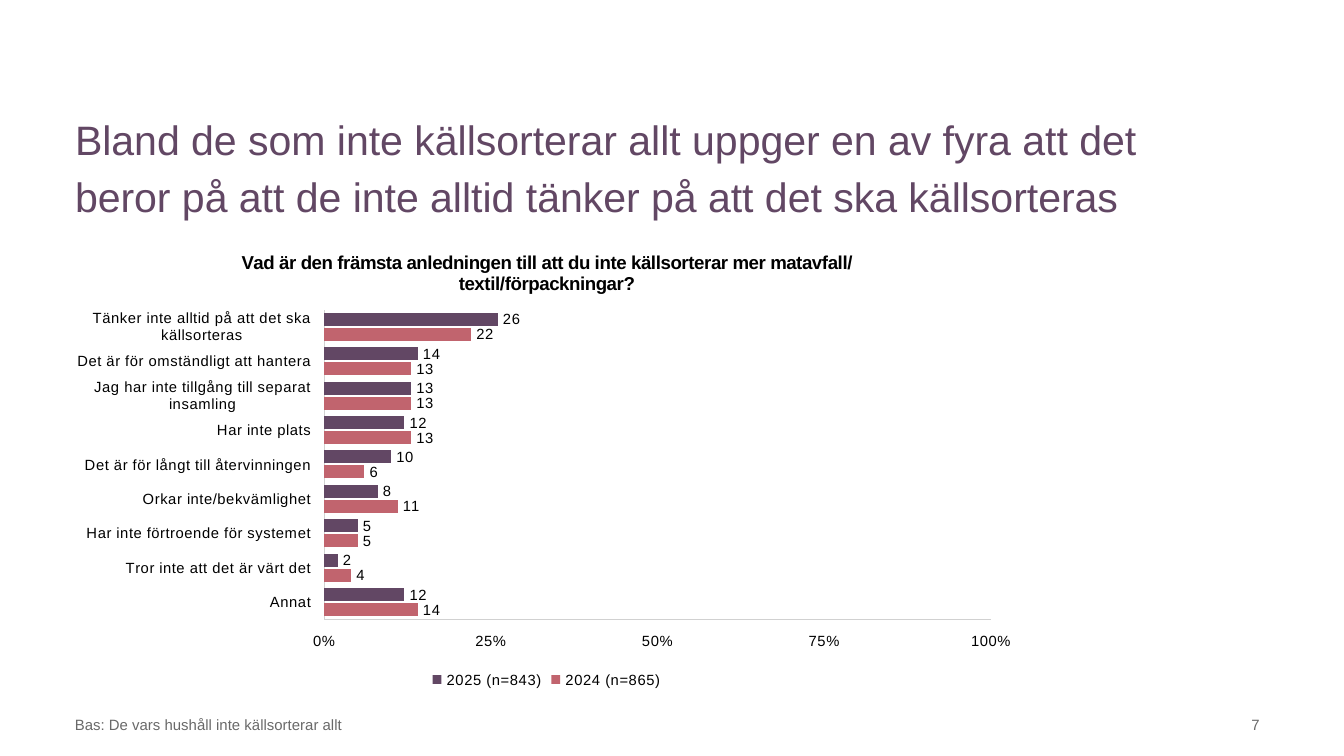
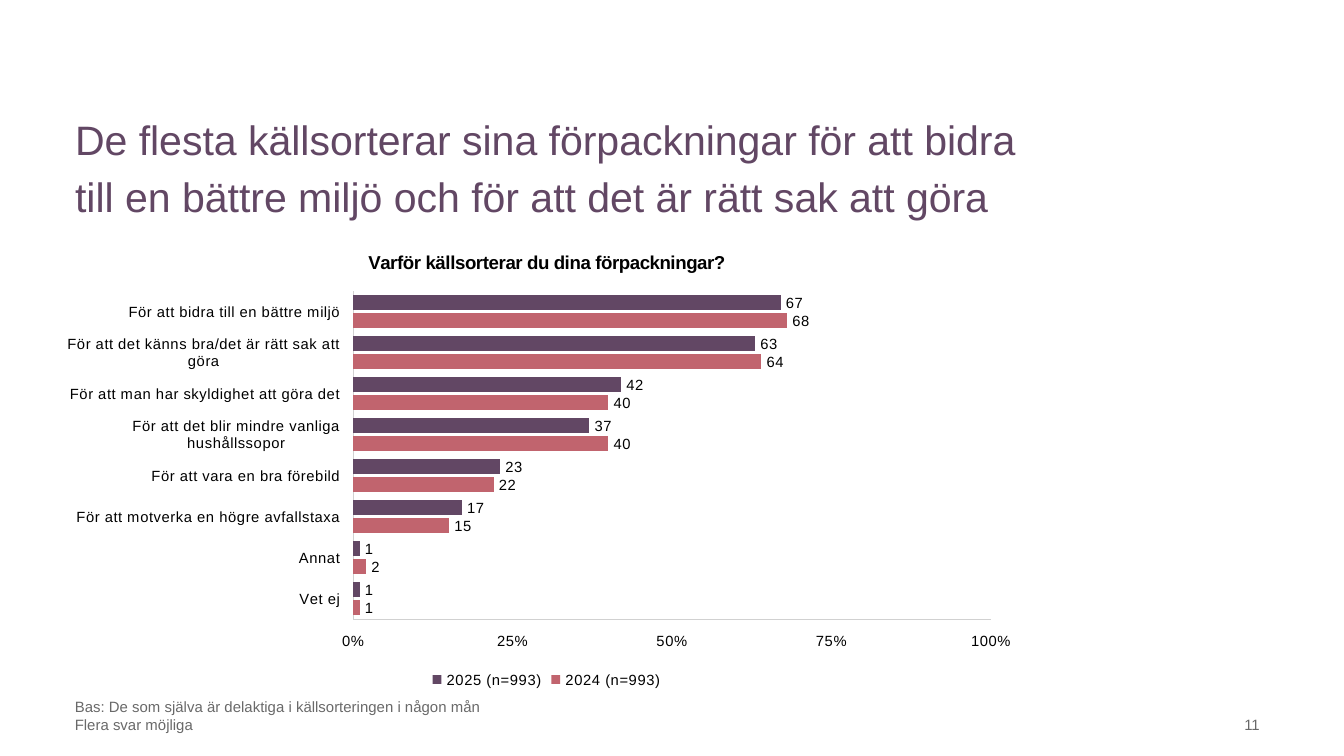
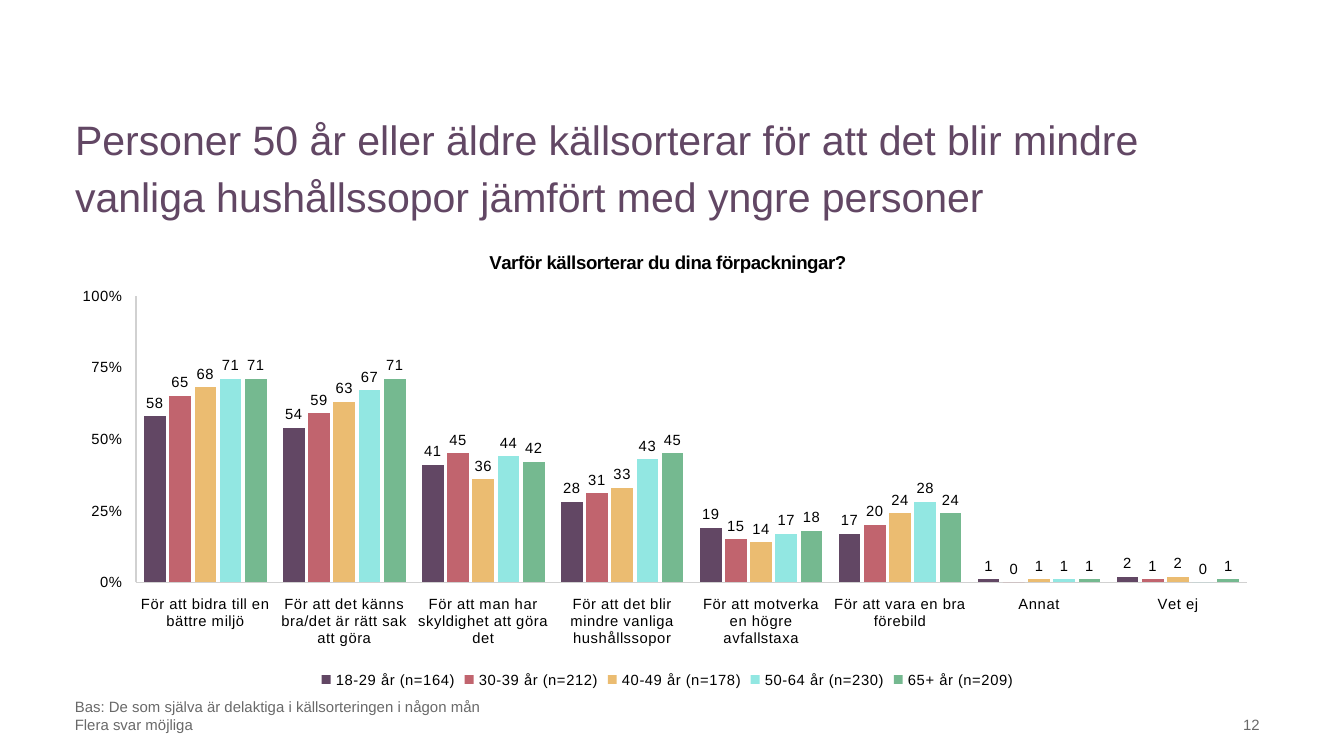
from dataclasses import dataclass

from lxml.etree import Element, SubElement
from pptx import Presentation
from pptx.chart.data import CategoryChartData as ChartData
from pptx.dml.color import RGBColor
from pptx.enum.chart import (
    XL_CHART_TYPE as ChartType,
    XL_LABEL_POSITION as LabelPosition,
    XL_LEGEND_POSITION as LegendPosition,
    XL_TICK_LABEL_POSITION as TickLabelPosition,
    XL_TICK_MARK as TickMark,
)
from pptx.enum.text import MSO_ANCHOR as Anchor, MSO_AUTO_SIZE as AutoSize, PP_ALIGN as Align
from pptx.oxml.ns import qn
from pptx.util import Pt


@dataclass(frozen=True)
class Theme:
    font: str = "Arial"
    plum: str = "624764"
    rose: str = "C1646E"
    sand: str = "EBBC71"
    aqua: str = "92E7E2"
    green: str = "75B990"
    black: str = "000000"
    grey: str = "696969"
    axis_grey: str = "D1D1D1"
    headline_size: float = 22
    question_size: float = 10
    footer_size: float = 8
    chart_size: float = 7.9
    question_tracking: int = -10
    label_tracking: int = 15


THEME = Theme()
AGE_COLORS = (THEME.plum, THEME.rose, THEME.sand, THEME.aqua, THEME.green)
YEAR_COLORS = (THEME.rose, THEME.plum)

AXIS_FORMAT = {
    "has_major_gridlines": False,
    "major_tick_mark": TickMark.NONE,
    "minor_tick_mark": TickMark.NONE,
    "tick_label_position": TickLabelPosition.LOW,
}
SCALE_FORMAT = {"minimum_scale": 0, "maximum_scale": 100, "major_unit": 25}
PERCENT_FORMAT = {"number_format": r"General\%", "number_format_is_linked": False}
LEGEND_FORMAT = {"position": LegendPosition.BOTTOM, "include_in_layout": False}
VALUE_LABEL_FORMAT = {
    "show_value": True,
    "number_format": "0",
    "number_format_is_linked": False,
    "position": LabelPosition.OUTSIDE_END,
}


def apply(target, values):
    for name, value in values.items():
        setattr(target, name, value)


class Report:
    def __init__(self, theme):
        self.theme = theme
        self.deck = Presentation()
        apply(self.deck, {"slide_width": Pt(720), "slide_height": Pt(405)})
        self.slide = None

    def new_slide(self, headline, headline_width, base, number):
        self.slide = self.deck.slides.add_slide(self.deck.slide_layouts[5])
        self.headline(headline, headline_width)
        self.footer(base, 33, 562, Align.LEFT)
        self.footer([number], 605, 77, Align.RIGHT)

    def style(self, font, size, color, bold=False):
        apply(font, {"name": self.theme.font, "size": Pt(size), "bold": bold})
        font.color.rgb = RGBColor.from_string(color)

    def place(self, shape, left, top, width, height):
        apply(shape, {"left": Pt(left), "top": Pt(top), "width": Pt(width), "height": Pt(height)})

    def headline(self, text, width):
        title = self.slide.shapes.title
        self.place(title, 33, 53.3, width, 62)
        frame = title.text_frame
        apply(frame, {
            "text": text,
            "word_wrap": True,
            "auto_size": AutoSize.NONE,
            "vertical_anchor": Anchor.TOP,
            "margin_top": Pt(4.6),
        })
        paragraph = frame.paragraphs[0]
        apply(paragraph, {"alignment": Align.LEFT, "line_spacing": 1.14, "space_after": Pt(5)})
        self.style(paragraph.font, self.theme.headline_size, self.theme.plum)

    def footer(self, lines, left, width, alignment):
        box = self.slide.shapes.add_textbox(Pt(left), Pt(375.1), Pt(width), Pt(21.6))
        frame = box.text_frame
        apply(frame, {"text": "\n".join(lines), "word_wrap": True, "vertical_anchor": Anchor.BOTTOM})
        for paragraph in frame.paragraphs:
            paragraph.alignment = alignment
            self.style(paragraph.font, self.theme.footer_size, self.theme.grey)

    def chart(self, kind, question, categories, answers, colors, width, gap, plot_area):
        data = ChartData(number_format="0")
        data.categories = categories
        for group, shares in answers.items():
            data.add_series(group, shares)
        chart = self.slide.shapes.add_chart(
            kind, Pt(34), Pt(123.8), Pt(width), Pt(247.7), data
        ).chart
        self.style(chart.font, self.theme.chart_size, self.theme.black)
        self.axes(chart)
        self.bars(chart.plots[0], gap, colors)
        chart.has_legend = True
        apply(chart.legend, LEGEND_FORMAT)
        self.style(chart.legend.font, self.theme.chart_size, self.theme.black)
        self.track(chart, "a:defRPr", self.theme.label_tracking)
        self.question(chart, question)
        self.fix_plot_area(chart, plot_area)

    def axes(self, chart):
        for axis in (chart.category_axis, chart.value_axis):
            apply(axis, AXIS_FORMAT)
            axis.format.line.width = Pt(0.75)
            axis.format.line.color.rgb = RGBColor.from_string(self.theme.axis_grey)
            self.style(axis.tick_labels.font, self.theme.chart_size, self.theme.black)
        apply(chart.value_axis, SCALE_FORMAT)
        apply(chart.value_axis.tick_labels, PERCENT_FORMAT)

    def bars(self, plot, gap, colors):
        apply(plot, {
            "gap_width": gap,
            "overlap": -16,
            "vary_by_categories": False,
            "has_data_labels": True,
        })
        apply(plot.data_labels, VALUE_LABEL_FORMAT)
        self.style(plot.data_labels.font, self.theme.chart_size, self.theme.black)
        for series, color in zip(plot.series, colors):
            series.format.fill.solid()
            series.format.fill.fore_color.rgb = RGBColor.from_string(color)

    def question(self, chart, text):
        chart.has_title = True
        chart.chart_title.include_in_layout = False
        paragraph = chart.chart_title.text_frame.paragraphs[0]
        run = paragraph.add_run()
        run.text = text
        self.style(run.font, self.theme.question_size, self.theme.black, True)
        self.track(chart, "a:rPr", self.theme.question_tracking)

    def track(self, chart, tag, spacing):
        for properties in chart.element.iter(qn(tag)):
            properties.set("spc", str(spacing))

    def fix_plot_area(self, chart, bounds):
        area = chart.element.find(".//" + qn("c:plotArea"))
        for automatic in area.findall(qn("c:layout")):
            area.remove(automatic)
        layout = Element(qn("c:layout"))
        area.insert(0, layout)
        manual = SubElement(layout, qn("c:manualLayout"))
        settings = {"layoutTarget": "inner", "xMode": "edge", "yMode": "edge"}
        settings.update(zip("xywh", bounds))
        for name, value in settings.items():
            SubElement(manual, qn(f"c:{name}")).set("val", str(value))


MOTIVE_QUESTION = "Varför källsorterar du dina förpackningar?"
PARTICIPANT_BASE = [
    "Bas: De som själva är delaktiga i källsorteringen i någon mån",
    "Flera svar möjliga",
]
ENVIRONMENT = "För att bidra till en bättre miljö"
RIGHT_THING = "För att det känns bra/det är rätt sak att göra"
DUTY = "För att man har skyldighet att göra det"
LESS_WASTE = "För att det blir mindre vanliga hushållssopor"
ROLE_MODEL = "För att vara en bra förebild"
WASTE_FEE = "För att motverka en högre avfallstaxa"
OTHER = "Annat"
UNSURE = "Vet ej"


def main():
    report = Report(THEME)

    report.new_slide(
        "Bland de som inte källsorterar allt uppger en av fyra att det beror på att "
        "de inte alltid tänker på att det ska källsorteras",
        592, ["Bas: De vars hushåll inte källsorterar allt"], "7",
    )
    report.chart(
        ChartType.BAR_CLUSTERED,
        "Vad är den främsta anledningen till att du inte källsorterar mer "
        "matavfall/textil/förpackningar?",
        [
            OTHER,
            "Tror inte att det är värt det",
            "Har inte förtroende för systemet",
            "Orkar inte/bekvämlighet",
            "Det är för långt till återvinningen",
            "Har inte plats",
            "Jag har inte tillgång till separat insamling",
            "Det är för omständligt att hantera",
            "Tänker inte alltid på att det ska källsorteras",
        ],
        {
            "2024 (n=865)": (14, 4, 5, 11, 6, 13, 13, 13, 22),
            "2025 (n=843)": (12, 2, 5, 8, 10, 12, 13, 14, 26),
        },
        YEAR_COLORS, 517.7, 50, (0.27, 0.17, 0.69, 0.67),
    )

    report.new_slide(
        "De flesta källsorterar sina förpackningar för att bidra till en bättre miljö "
        "och för att det är rätt sak att göra",
        536, PARTICIPANT_BASE, "11",
    )
    report.chart(
        ChartType.BAR_CLUSTERED,
        MOTIVE_QUESTION,
        [UNSURE, OTHER, WASTE_FEE, ROLE_MODEL, LESS_WASTE, DUTY, RIGHT_THING, ENVIRONMENT],
        {
            "2024 (n=993)": (1, 2, 15, 22, 40, 40, 64, 68),
            "2025 (n=993)": (1, 1, 17, 23, 37, 42, 63, 67),
        },
        YEAR_COLORS, 517.7, 50, (0.3, 0.13, 0.66, 0.71),
    )

    report.new_slide(
        "Personer 50 år eller äldre källsorterar för att det blir mindre vanliga "
        "hushållssopor jämfört med yngre personer",
        594, PARTICIPANT_BASE, "12",
    )
    report.chart(
        ChartType.COLUMN_CLUSTERED,
        MOTIVE_QUESTION,
        [ENVIRONMENT, RIGHT_THING, DUTY, LESS_WASTE, WASTE_FEE, ROLE_MODEL, OTHER, UNSURE],
        {
            "18-29 år (n=164)": (58, 54, 41, 28, 19, 17, 1, 2),
            "30-39 år (n=212)": (65, 59, 45, 31, 15, 20, 0, 1),
            "40-49 år (n=178)": (68, 63, 36, 33, 14, 24, 1, 2),
            "50-64 år (n=230)": (71, 67, 44, 43, 17, 28, 1, 0),
            "65+ år (n=209)": (71, 71, 42, 45, 18, 24, 1, 1),
        },
        AGE_COLORS, 647.3, 75, (0.06, 0.14, 0.92, 0.62),
    )

    report.deck.save("out.pptx")


if __name__ == "__main__":
    main()
